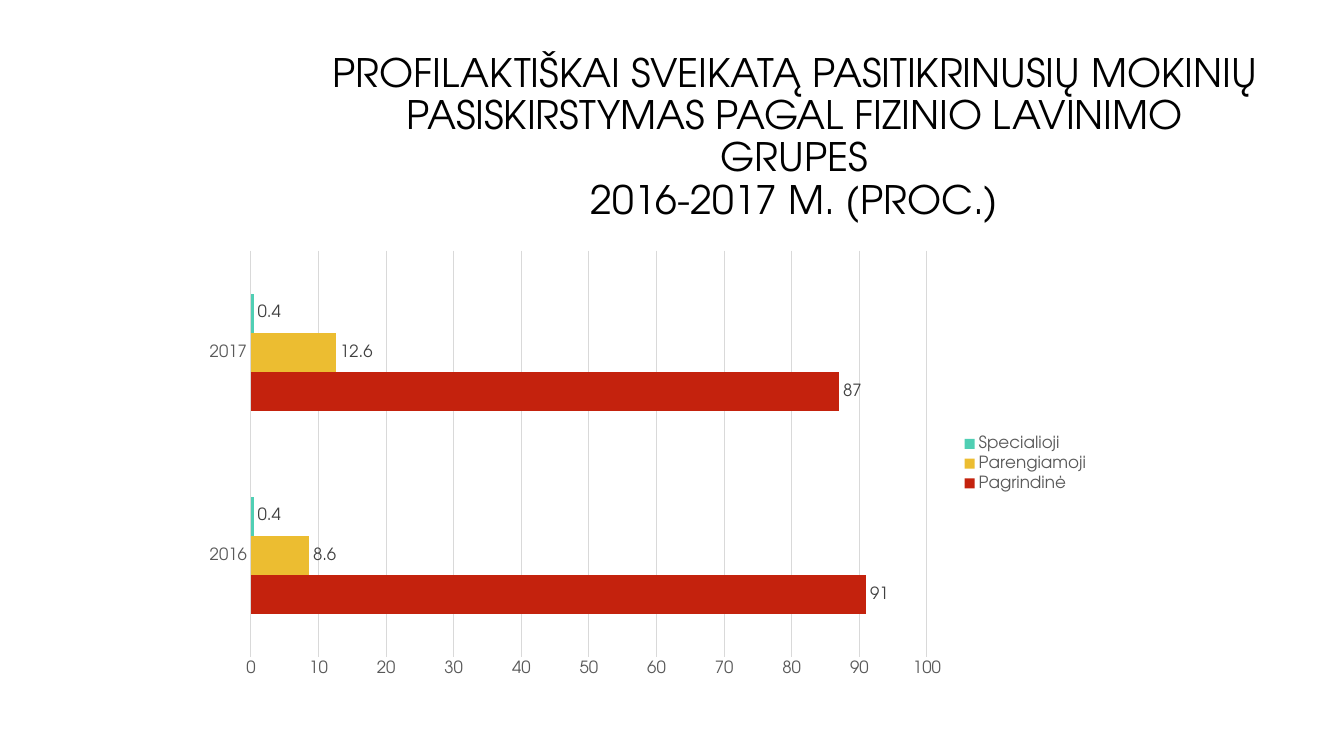
from dataclasses import dataclass

from pptx import Presentation
from pptx.chart.data import CategoryChartData
from pptx.dml.color import RGBColor
from pptx.enum.chart import XL_CHART_TYPE, XL_LABEL_POSITION, XL_LEGEND_POSITION, XL_TICK_MARK
from pptx.enum.text import MSO_ANCHOR, PP_ALIGN
from pptx.util import Inches, Pt


@dataclass(frozen=True)
class Theme:
    font: str = "TeX Gyre Adventor"
    title_size: int = 28
    chart_size: int = 12
    line_width: float = 0.75
    title: str = "000000"
    axis_text: str = "595959"
    label_text: str = "404040"
    grid: str = "D9D9D9"


THEME = Theme()
YEARS = ["2016", "2017"]
GROUPS = [
    ("Pagrindinė", [91, 87], "C4220D"),
    ("Parengiamoji", [8.6, 12.6], "ECBD31"),
    ("Specialioji", [0.4, 0.4], "50CFB4"),
]


def format_font(font, size, color):
    font.name = THEME.font
    font.size = Pt(size)
    font.color.rgb = RGBColor.from_string(color)


def format_line(line):
    line.color.rgb = RGBColor.from_string(THEME.grid)
    line.width = Pt(THEME.line_width)


def add_text(slide, text, *, left, top, width, height, size, color, align, line_spacing):
    shape = slide.shapes.add_textbox(Inches(left), Inches(top), Inches(width), Inches(height))
    frame = shape.text_frame
    frame.word_wrap = True
    frame.vertical_anchor = MSO_ANCHOR.MIDDLE
    paragraph = frame.paragraphs[0]
    paragraph.text = text
    paragraph.alignment = align
    paragraph.line_spacing = line_spacing
    for run in paragraph.runs:
        format_font(run.font, size, color)


def format_axis(axis):
    axis.major_tick_mark = XL_TICK_MARK.NONE
    axis.minor_tick_mark = XL_TICK_MARK.NONE
    format_font(axis.tick_labels.font, THEME.chart_size, THEME.axis_text)


def format_series(series, color):
    series.format.fill.solid()
    series.format.fill.fore_color.rgb = RGBColor.from_string(color)
    series.invert_if_negative = False
    labels = series.data_labels
    labels.show_value = True
    labels.position = XL_LABEL_POSITION.OUTSIDE_END
    format_font(labels.font, THEME.chart_size, THEME.label_text)


def add_bar_chart(slide, categories, groups, *, left, top, width, height):
    data = CategoryChartData()
    data.categories = categories
    for name, values, _ in groups:
        data.add_series(name, values)
    chart = slide.shapes.add_chart(
        XL_CHART_TYPE.BAR_CLUSTERED,
        Inches(left), Inches(top), Inches(width), Inches(height), data,
    ).chart
    format_font(chart.font, THEME.chart_size, THEME.axis_text)
    chart.has_title = False

    format_axis(chart.category_axis)
    format_line(chart.category_axis.format.line)
    value_axis = chart.value_axis
    format_axis(value_axis)
    value_axis.minimum_scale = 0
    value_axis.maximum_scale = 100
    value_axis.major_unit = 10
    value_axis.format.line.fill.background()
    value_axis.has_major_gridlines = True
    format_line(value_axis.major_gridlines.format.line)

    chart.has_legend = True
    chart.legend.position = XL_LEGEND_POSITION.RIGHT
    chart.legend.include_in_layout = False
    format_font(chart.legend.font, THEME.chart_size, THEME.axis_text)

    plot = chart.plots[0]
    plot.gap_width = 219
    plot.vary_by_categories = False
    for series, (_, _, color) in zip(plot.series, groups):
        format_series(series, color)


def main():
    presentation = Presentation()
    presentation.slide_width = Inches(13.33)
    presentation.slide_height = Inches(7.5)
    slide = presentation.slides.add_slide(presentation.slide_layouts[6])
    add_text(
        slide,
        "PROFILAKTIŠKAI SVEIKATĄ PASITIKRINUSIŲ MOKINIŲ PASISKIRSTYMAS "
        "PAGAL FIZINIO LAVINIMO GRUPES\v2016-2017 M. (PROC.)",
        left=3.17, top=0.49, width=9.42, height=1.76,
        size=THEME.title_size, color=THEME.title,
        align=PP_ALIGN.CENTER, line_spacing=0.9,
    )
    add_bar_chart(slide, YEARS, GROUPS, left=1.9, top=2.4, width=9.01, height=4.4)
    presentation.save("out.pptx")


if __name__ == "__main__":
    main()
